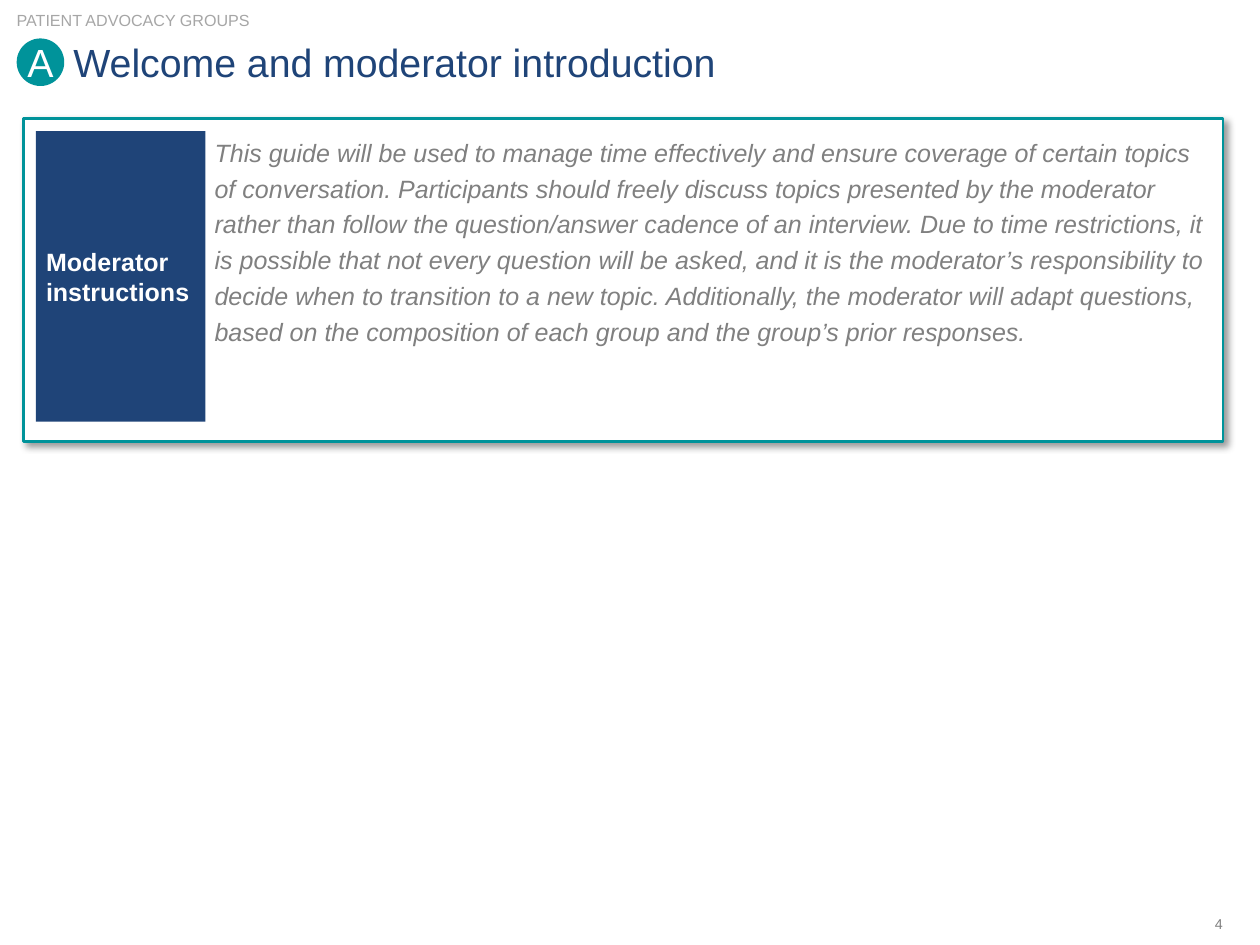
from lxml.etree import SubElement as Sub
from pptx import Presentation
from pptx.dml.color import RGBColor
from pptx.enum.shapes import MSO_SHAPE as Shape
from pptx.enum.text import MSO_ANCHOR as Anchor, MSO_AUTO_SIZE as Fit, PP_ALIGN as Align
from pptx.oxml.ns import qn
from pptx.util import Cm, Pt

# Content
TAG = "PATIENT ADVOCACY GROUPS"
MARK = "A"
TITLE = "Welcome and moderator introduction"
LABEL = "Moderator instructions"
GUIDE = (
    "This guide will be used to manage time effectively and ensure coverage of certain "
    "topics of conversation. Participants should freely discuss topics presented by the "
    "moderator rather than follow the question/answer cadence of an interview. Due to time "
    "restrictions, it is possible that not every question will be asked, and it is the "
    "moderator’s responsibility to decide when to transition to a new topic. Additionally, "
    "the moderator will adapt questions, based on the composition of each group and the "
    "group’s prior responses."
)
NUMBER = "4"

COLORS = {"navy": "1F4478", "teal": "00939A", "gray": "808080",
          "pale": "A6A6A6", "white": "FFFFFF", "black": "000000"}

# Layout in cm
EDGE, HEAD = 0.33, 0.76
DISC = 0.94
ROW = 2.59


def rgb(name):
    return RGBColor.from_string(COLORS[name])


def write(shape, text, size, color, bold=False, italic=False, align=Align.LEFT,
          anchor=Anchor.TOP, wrap=True, inset=0):
    frame = shape.text_frame
    frame.word_wrap = wrap
    frame.auto_size = Fit.NONE
    frame.vertical_anchor = anchor
    frame.margin_left = frame.margin_right = Cm(inset)
    frame.margin_top = frame.margin_bottom = Cm(inset)
    para = frame.paragraphs[0]
    para.text = text
    para.alignment = align
    font = para.font
    font.name, font.size = "Arial", Pt(size)
    font.bold, font.italic = bold, italic
    font.color.rgb = rgb(color)
    return para


def place(shape, *box):
    shape.left, shape.top, shape.width, shape.height = map(Cm, box)


def draw(kind, fill, *box):
    shape = slide.shapes.add_shape(kind, *map(Cm, box))
    shape.shadow.inherit = False
    shape.fill.solid()
    shape.fill.fore_color.rgb = rgb(fill)
    shape.line.fill.background()
    return shape


def label(*box):
    return slide.shapes.add_textbox(*map(Cm, box))


deck = Presentation()
deck.slide_width, deck.slide_height = Cm(24.89), Cm(18.67)
slide = deck.slides.add_slide(deck.slide_layouts[5])

# Heading
title = slide.shapes.title
place(title, EDGE, HEAD, 23.95, DISC)
para = write(title, TITLE, 22, "navy")
props = para._p.get_or_add_pPr()
props.set("marL", str(Cm(1.12)))
props.set("indent", "0")

disc = draw(Shape.OVAL, "teal", EDGE, HEAD, DISC, DISC)
write(disc, MARK, 22, "white", align=Align.CENTER, anchor=Anchor.MIDDLE, wrap=False)
write(label(EDGE, 0.2, 4.72, 0.38), TAG, 9, "pale", wrap=False)

# Framed card with a soft shadow
card = draw(Shape.RECTANGLE, "white", 0.46, 2.34, 23.7, 6.38)
card.line.color.rgb = rgb("teal")
card.line.width = Pt(1.5)
effects = card._element.spPr.find(qn("a:effectLst"))
shade = Sub(effects, qn("a:outerShdw"), blurRad=str(Pt(4)), dist=str(Pt(3)),
            dir="2700000", algn="tl", rotWithShape="0")
tone = Sub(shade, qn("a:srgbClr"), val=COLORS["black"])
Sub(tone, qn("a:alpha"), val="40000")

# Instructions
panel = draw(Shape.RECTANGLE, "navy", 0.71, ROW, 3.35, 5.74)
write(panel, LABEL, 14, "white", bold=True, anchor=Anchor.MIDDLE, inset=0.2)
guide = write(label(4.24, ROW, 19.66, 4.24), GUIDE, 14, "gray", italic=True)
guide.line_spacing = 1.2

# Page number
write(label(23.8, 18.08, 0.36, 0.33), NUMBER, 8, "gray", align=Align.RIGHT,
      anchor=Anchor.MIDDLE, wrap=False)

deck.save("out.pptx")
